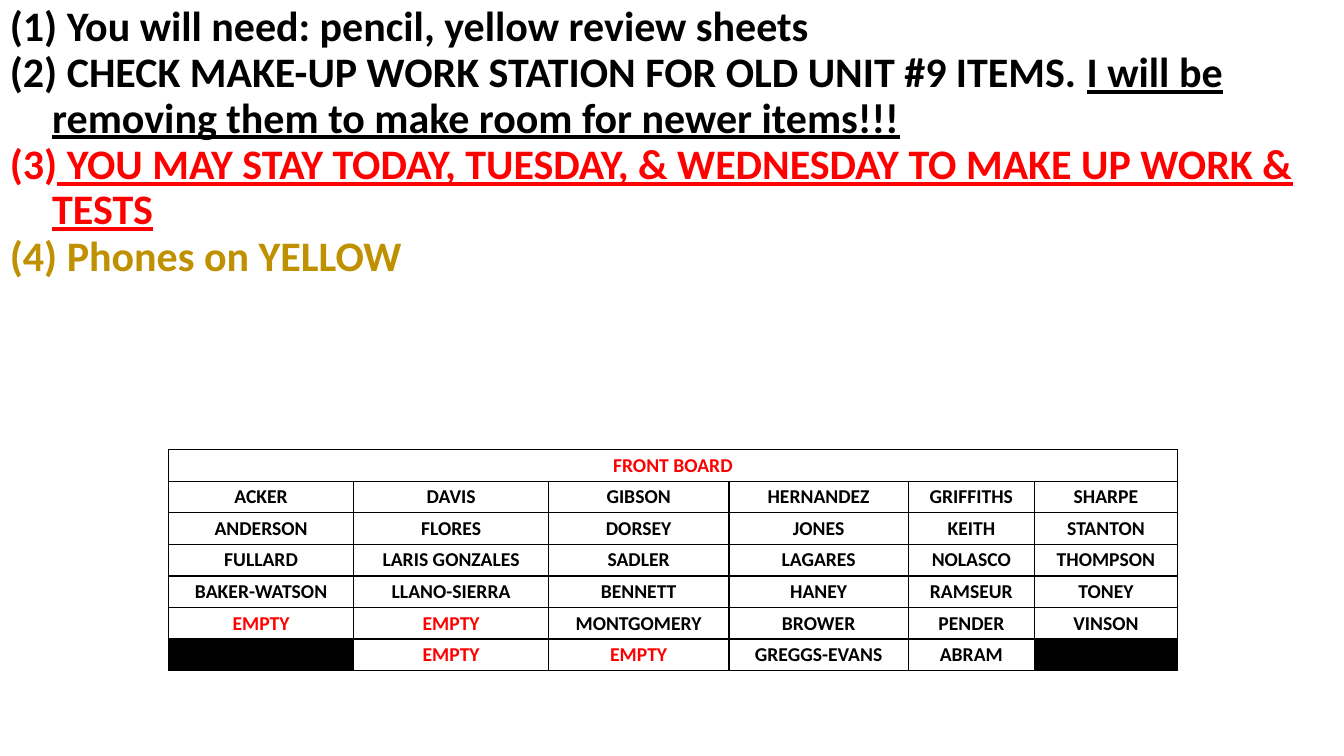
from lxml import etree
from pptx import Presentation
from pptx.dml.color import RGBColor
from pptx.enum.text import PP_ALIGN
from pptx.oxml.ns import qn
from pptx.util import Inches, Pt

BLACK = RGBColor(0x00, 0x00, 0x00)
RED = RGBColor(0xFF, 0x00, 0x00)
GOLD = RGBColor(0xBF, 0x90, 0x00)


def add_text(paragraph, words, size, color=BLACK, underline=False):
    run = paragraph.add_run()
    run.text = words
    run.font.name = "Calibri"
    run.font.size = Pt(size)
    run.font.bold = True
    run.font.underline = underline
    run.font.color.rgb = color


def add_borders(cell):
    """Draw a 1 pt black line on each side; call before the cell is filled."""
    properties = cell._tc.get_or_add_tcPr()
    for side in ("a:lnL", "a:lnR", "a:lnT", "a:lnB"):
        line = etree.SubElement(properties, qn(side), w=str(Pt(1)))
        fill = etree.SubElement(line, qn("a:solidFill"))
        etree.SubElement(fill, qn("a:srgbClr"), val=str(BLACK))


prs = Presentation()
prs.slide_width = Inches(13.33)
prs.slide_height = Inches(7.5)
slide = prs.slides.add_slide(prs.slide_layouts[6])

# Numbered instructions: each is a list of (words, color, underline)
instructions = [
    [(" You will need: pencil, yellow review sheets", BLACK, False)],
    [(" CHECK MAKE-UP WORK STATION FOR OLD UNIT #9 ITEMS. ", BLACK, False),
     ("I will be removing them to make room for newer items!!!", BLACK, True)],
    [(" YOU MAY STAY TODAY, TUESDAY, & WEDNESDAY TO MAKE UP WORK & TESTS", RED, True)],
    [(" Phones on YELLOW", GOLD, False)],
]
agenda = slide.shapes.add_textbox(0, 0, Inches(13.33), Inches(4.23)).text_frame
agenda.word_wrap = True
for number, parts in enumerate(instructions):
    item = agenda.add_paragraph() if number else agenda.paragraphs[0]
    item.line_spacing = 0.9
    item.space_before = Pt(0.8)
    for words, color, underline in parts:
        add_text(item, words, 30, color, underline)
    layout = item._p.get_or_add_pPr()
    layout.set("marL", str(Inches(0.42)))
    layout.set("indent", str(Inches(-0.42)))
    etree.SubElement(layout, qn("a:buFont"), typeface="+mj-lt")
    etree.SubElement(layout, qn("a:buAutoNum"), type="arabicParenBoth")

# Seating chart; None marks a blacked-out place
seats = [
    ["FRONT BOARD"] + [""] * 5,
    ["ACKER", "DAVIS", "GIBSON", "HERNANDEZ", "GRIFFITHS", "SHARPE"],
    ["ANDERSON", "FLORES", "DORSEY", "JONES", "KEITH", "STANTON"],
    ["FULLARD", "LARIS GONZALES", "SADLER", "LAGARES", "NOLASCO", "THOMPSON"],
    ["BAKER-WATSON", "LLANO-SIERRA", "BENNETT", "HANEY", "RAMSEUR", "TONEY"],
    ["EMPTY", "EMPTY", "MONTGOMERY", "BROWER", "PENDER", "VINSON"],
    [None, "EMPTY", "EMPTY", "GREGGS-EVANS", "ABRAM", None],
]
column_widths = [1.84, 1.93, 1.79, 1.78, 1.25, 1.42]
seating = slide.shapes.add_table(
    len(seats), len(column_widths),
    Inches(1.67), Inches(4.46), Inches(10), Inches(2.16)).table
seating.first_row = False
seating.horz_banding = False
for column, width in zip(seating.columns, column_widths):
    column.width = Inches(width)

for r, names in enumerate(seats):
    seating.rows[r].height = Inches(0.31)
    for c, name in enumerate(names):
        seat = seating.cell(r, c)
        seat.margin_left = seat.margin_right = Inches(0.07)
        seat.margin_top = seat.margin_bottom = Inches(0.04)
        add_borders(seat)
        if name is None:
            seat.fill.solid()
            seat.fill.fore_color.rgb = BLACK
        else:
            seat.fill.background()
        label = seat.text_frame.paragraphs[0]
        label.alignment = PP_ALIGN.CENTER
        if name:
            add_text(label, name, 14, RED if name in ("EMPTY", "FRONT BOARD") else BLACK)
        else:
            # keeps blank cells from stretching their row
            etree.SubElement(label._p, qn("a:endParaRPr"), sz="1400")
seating.cell(0, 0).merge(seating.cell(0, len(column_widths) - 1))

prs.save("out.pptx")
